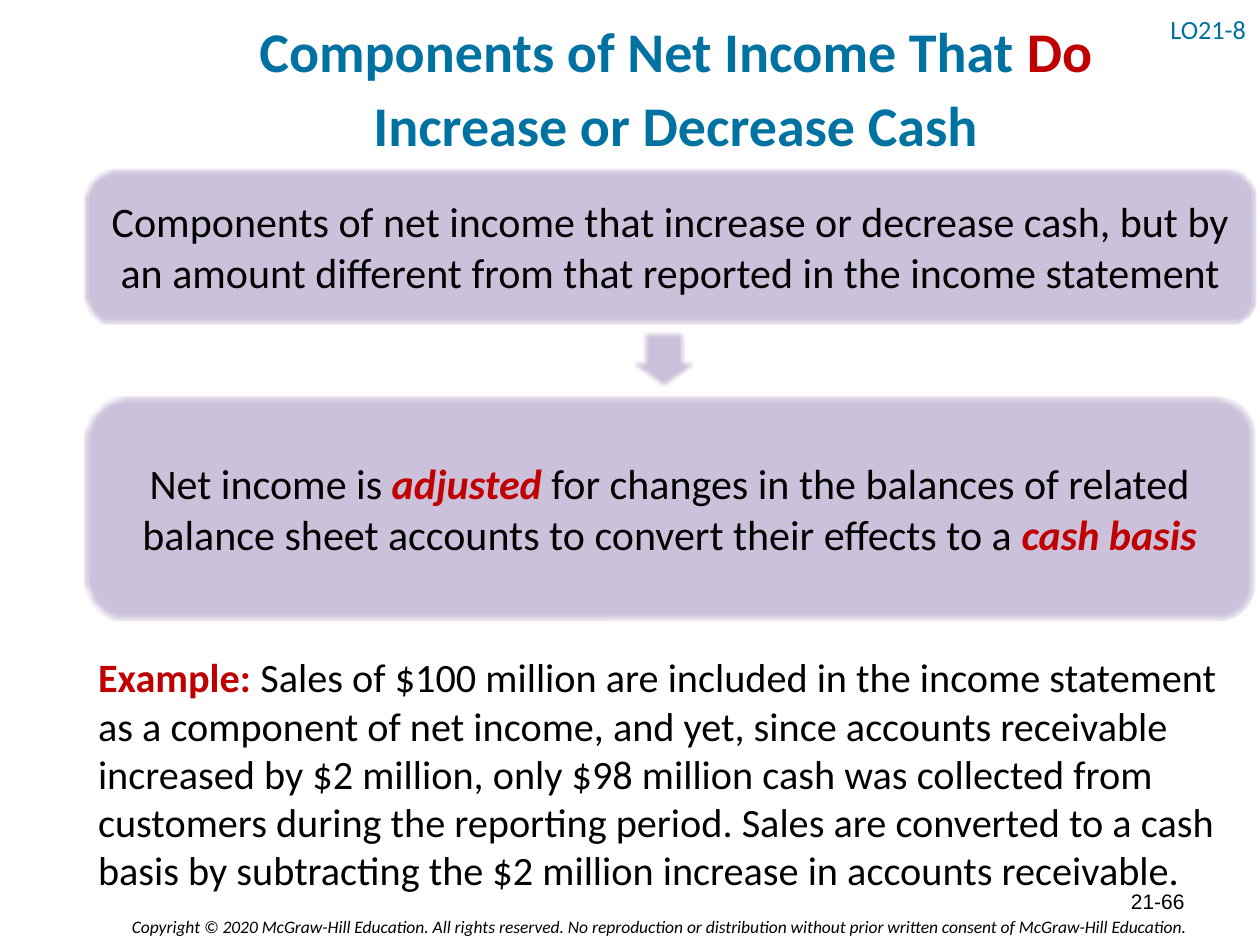
from dataclasses import dataclass

from lxml.etree import SubElement
from pptx import Presentation
from pptx.dml.color import RGBColor
from pptx.enum.shapes import MSO_SHAPE as Preset
from pptx.enum.text import MSO_ANCHOR as Anchor, PP_ALIGN as Align
from pptx.oxml.ns import qn
from pptx.util import Inches, Pt


@dataclass(frozen=True)
class Theme:
    black: str = "000000"
    blue: str = "0072A2"
    red: str = "C00000"
    panel: str = "CCC1DA"
    border: str = "B3A2C7"
    font: str = "Calibri"
    number_font: str = "Arial"
    title: int = 32
    panel_text: int = 24
    body: int = 23
    objective: int = 15
    page_number: int = 12
    footer: int = 10
    border_width: int = 2
    soft_edge: float = 2.5


@dataclass(frozen=True)
class Area:
    column: float
    row: float
    columns: float
    rows: float

    def box(self) -> tuple:
        return tuple(
            Inches(cells * CELL)
            for cells in (self.column, self.row, self.columns, self.rows)
        )


@dataclass(frozen=True)
class Span:
    text: str
    color: str | None = None
    bold: bool | None = None
    italic: bool | None = None


@dataclass(frozen=True)
class Copy:
    lines: list[list[Span]]
    size: int
    color: str = Theme.black
    font: str = Theme.font
    align: Align = Align.LEFT
    anchor: Anchor = Anchor.TOP
    spacing: float = 1.0
    bold: bool = False
    italic: bool = False


THEME = Theme()
COLUMNS, ROWS, CELL = 100, 75, 0.1


def write(shape, copy: Copy) -> None:
    frame = shape.text_frame
    frame.word_wrap = True
    frame.vertical_anchor = copy.anchor
    paragraph = frame.paragraphs[0]
    paragraph.alignment = copy.align
    paragraph.line_spacing = copy.spacing
    font = paragraph.font
    font.name, font.size = copy.font, Pt(copy.size)
    font.bold, font.italic = copy.bold, copy.italic
    font.color.rgb = RGBColor.from_string(copy.color)
    for index, line in enumerate(copy.lines):
        if index:
            paragraph.add_line_break()
        for span in line:
            run = paragraph.add_run()
            run.text = span.text
            if span.color:
                run.font.color.rgb = RGBColor.from_string(span.color)
            if span.bold is not None:
                run.font.bold = span.bold
            if span.italic is not None:
                run.font.italic = span.italic


def add_text(slide, area: Area, copy: Copy) -> None:
    write(slide.shapes.add_textbox(*area.box()), copy)


def add_soft_shape(slide, preset: Preset, area: Area):
    shape = slide.shapes.add_shape(preset, *area.box())
    shape.shadow.inherit = False
    shape.fill.solid()
    shape.fill.fore_color.rgb = RGBColor.from_string(THEME.panel)
    shape.line.color.rgb = RGBColor.from_string(THEME.border)
    shape.line.width = Pt(THEME.border_width)
    effects = shape._element.spPr.find(qn("a:effectLst"))
    SubElement(effects, qn("a:softEdge"), rad=str(Pt(THEME.soft_edge)))
    return shape


def add_panel(slide, area: Area, spans: list[Span]) -> None:
    shape = add_soft_shape(slide, Preset.ROUNDED_RECTANGLE, area)
    write(shape, Copy([spans], THEME.panel_text, align=Align.CENTER, anchor=Anchor.MIDDLE))


def main() -> None:
    presentation = Presentation()
    presentation.slide_width = Inches(COLUMNS * CELL)
    presentation.slide_height = Inches(ROWS * CELL)
    slide = presentation.slides.add_slide(presentation.slide_layouts[6])

    add_text(slide, Area(4.5, 72.2, 90.9, 2.7), Copy(
        [[Span("Copyright © 2020 McGraw-Hill Education. All rights reserved. "
               "No reproduction or distribution without prior written consent "
               "of McGraw-Hill Education. ")]],
        THEME.footer, align=Align.RIGHT, italic=True))
    add_text(slide, Area(91.9, 0.5, 8.1, 4), Copy(
        [[Span("LO21-8")]], THEME.objective, THEME.blue,
        anchor=Anchor.MIDDLE, spacing=0.9))
    add_text(slide, Area(8.3, 0, 91.7, 13.3), Copy(
        [[Span("Components of Net Income That "), Span("Do ", THEME.red)],
         [Span("Increase or Decrease Cash ")]],
        THEME.title, THEME.blue, align=Align.CENTER,
        anchor=Anchor.MIDDLE, spacing=1.1, bold=True))

    add_panel(slide, Area(6.8, 13.5, 92.8, 12.1), [
        Span("Components of net income that increase or decrease cash, but by "
             "an amount different from that reported in the income statement")])
    arrow = add_soft_shape(slide, Preset.RIGHT_ARROW, Area(50.4, 25.4, 4.6, 6.5))
    arrow.rotation = 90
    add_panel(slide, Area(6.8, 31.5, 92.7, 17.7), [
        Span("Net income is "),
        Span("adjusted", THEME.red, True, True),
        Span(" for changes in the balances of related balance sheet accounts "
             "to convert their effects to a "),
        Span("cash basis", THEME.red, True, True)])

    add_text(slide, Area(6.8, 51.3, 92.7, 20.4), Copy(
        [[Span("Example: ", THEME.red, True),
          Span("Sales of $100 million are included in the income statement as a "
               "component of net income, and yet, since accounts receivable "
               "increased by $2 million, only $98 million cash was collected from "
               "customers during the reporting period. Sales are converted to a "
               "cash basis by subtracting the $2 million increase in accounts "
               "receivable.")]],
        THEME.body))
    add_text(slide, Area(71.7, 69.5, 23.3, 4), Copy(
        [[Span("21-66")]], THEME.page_number, font=THEME.number_font,
        align=Align.RIGHT, anchor=Anchor.MIDDLE))

    presentation.save("out.pptx")


if __name__ == "__main__":
    main()
